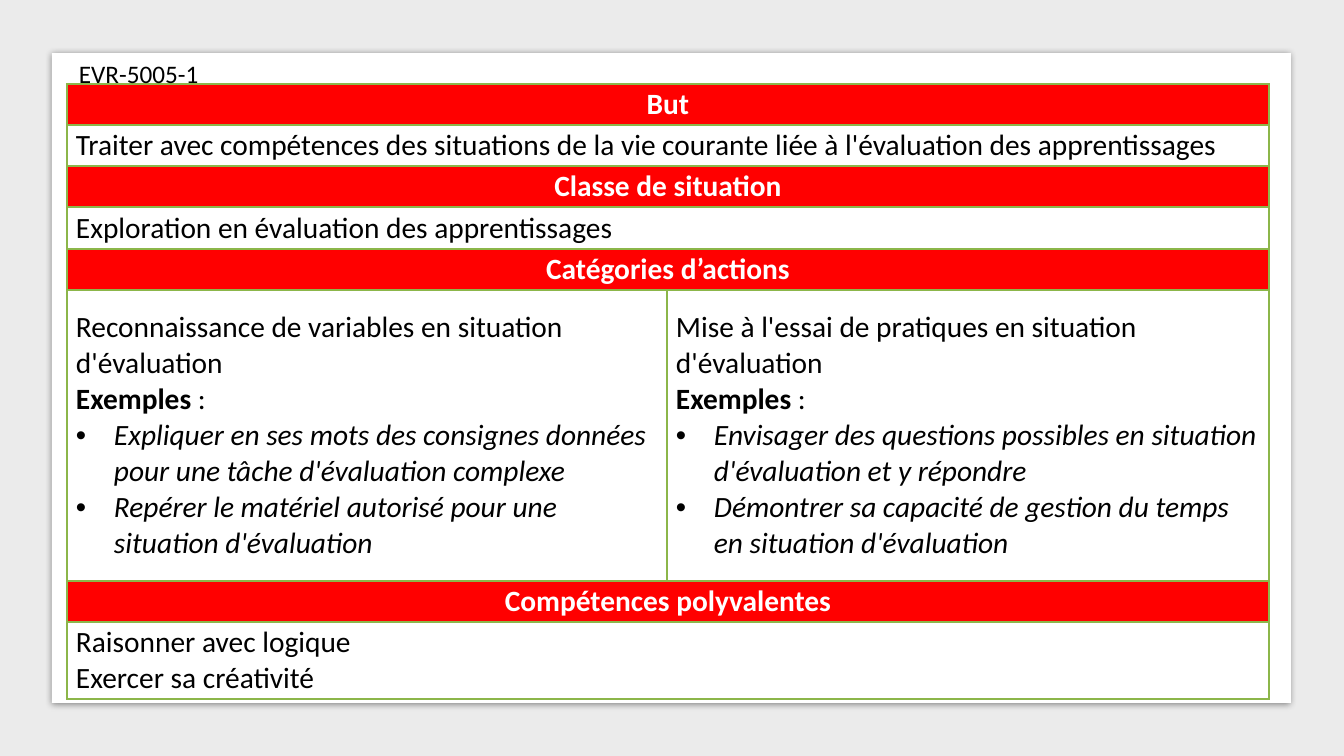
from lxml.etree import SubElement
from pptx import Presentation
from pptx.dml.color import RGBColor
from pptx.enum.shapes import MSO_SHAPE
from pptx.enum.text import MSO_ANCHOR, PP_ALIGN
from pptx.oxml import parse_xml
from pptx.oxml.ns import nsdecls, qn
from pptx.util import Pt

# Content: one entry per table row, a string is a red heading
CODE = "EVR-5005-1"
EXAMPLES = ("Exemples", " :")
ROWS = [
    "But",
    ["Traiter avec compétences des situations de la vie courante liée à "
     "l'évaluation des apprentissages"],
    "Classe de situation",
    ["Exploration en évaluation des apprentissages"],
    "Catégories d’actions",
    {
        "Reconnaissance de variables en situation d'évaluation": [
            "Expliquer en ses mots des consignes données pour une tâche d'évaluation complexe",
            "Repérer le matériel autorisé pour une situation d'évaluation",
        ],
        "Mise à l'essai de pratiques en situation d'évaluation": [
            "Envisager des questions possibles en situation d'évaluation et y répondre",
            "Démontrer sa capacité de gestion du temps en situation d'évaluation",
        ],
    },
    "Compétences polyvalentes",
    ["Raisonner avec logique", "Exercer sa créativité"],
]

# Layout in px
SLIDE = (1344, 756)
PANEL = (52, 53, 1239, 650)
TABLE = (67, 84)
COLS = (600, 602)
HEIGHTS = (41, 41, 41, 42, 41, 291, 41, 77)
CODE_BOX = (69, 53, 150, 40)
INSET, INDENT = 9, 38

FONT = "Calibri"
RED, WHITE, BLACK, GREY, GREEN = "FF0000", "FFFFFF", "000000", "EBEBEB", "8CB64A"


def px(n):
    return round(n * 12192000 / 1344)


def rgb(value):
    return RGBColor.from_string(value)


def style(r, size=21, color=BLACK, bold=False, italic=False):
    f = r.font
    f.name, f.size, f.bold, f.italic = FONT, Pt(size), bold, italic
    f.color.rgb = rgb(color)


def add_rect(s, box, color):
    sp = s.shapes.add_shape(MSO_SHAPE.RECTANGLE, *map(px, box))
    sp.shadow.inherit = False
    sp.fill.solid()
    sp.fill.fore_color.rgb = rgb(color)
    sp.line.fill.background()
    return sp


def add_shadow(sp):
    effects = sp.element.spPr.find(qn("a:effectLst"))
    effects.append(parse_xml(
        f'<a:outerShdw {nsdecls("a")} blurRad="{Pt(5)}" dist="{Pt(1.4)}" dir="5400000" '
        f'algn="ctr" rotWithShape="0"><a:srgbClr val="{BLACK}"><a:alpha val="43000"/>'
        '</a:srgbClr></a:outerShdw>'))


def format_cell(cell, fill):
    cell.margin_left = cell.margin_right = px(INSET)
    cell.margin_top = cell.margin_bottom = 0
    cell.vertical_anchor = MSO_ANCHOR.MIDDLE
    cell.fill.solid()
    cell.fill.fore_color.rgb = rgb(fill)
    tcPr = cell._tc.get_or_add_tcPr()
    for i, side in enumerate("LRTB"):
        tcPr.insert(i, parse_xml(
            f'<a:ln{side} {nsdecls("a")} w="{Pt(1)}"><a:solidFill>'
            f'<a:srgbClr val="{GREEN}"/></a:solidFill></a:ln{side}>'))


def write(cell, lines, **look):
    cell.text_frame.text = "\n".join(lines)
    for p in cell.text_frame.paragraphs:
        for r in p.runs:
            style(r, **look)


def write_category(cell, title, examples):
    write(cell, [title, EXAMPLES[0], *examples])
    label, *items = cell.text_frame.paragraphs[1:]
    style(label.runs[0], bold=True)
    r = label.add_run()
    r.text = EXAMPLES[1]
    style(r)
    for p in items:
        style(p.runs[0], italic=True)
        pPr = p._p.get_or_add_pPr()
        pPr.set("marL", str(px(INDENT)))
        pPr.set("indent", str(-px(INDENT)))
        SubElement(pPr, qn("a:buFont"), typeface="Arial")
        SubElement(pPr, qn("a:buChar"), char="•")


prs = Presentation()
prs.slide_width, prs.slide_height = map(px, SLIDE)
s = prs.slides.add_slide(prs.slide_layouts[6])

# Background and panel
add_rect(s, (0, 0, *SLIDE), GREY)
add_shadow(add_rect(s, PANEL, WHITE))

# Table
size = (sum(COLS), sum(HEIGHTS))
table = s.shapes.add_table(len(ROWS), len(COLS), *map(px, TABLE + size)).table
table.first_row = table.horz_banding = False
for col, width in zip(table.columns, COLS):
    col.width = px(width)
for i, (content, height) in enumerate(zip(ROWS, HEIGHTS)):
    table.rows[i].height = px(height)
    left, right = table.cell(i, 0), table.cell(i, 1)
    heading = isinstance(content, str)
    for cell in (left, right):
        format_cell(cell, RED if heading else WHITE)
    if isinstance(content, dict):
        for cell, (title, examples) in zip((left, right), content.items()):
            write_category(cell, title, examples)
        continue
    left.merge(right)
    if heading:
        write(left, [content], color=WHITE, bold=True)
        left.text_frame.paragraphs[0].alignment = PP_ALIGN.CENTER
    else:
        write(left, content)

# Course code
tf = s.shapes.add_textbox(*map(px, CODE_BOX)).text_frame
tf.word_wrap = True
tf.text = CODE
style(tf.paragraphs[0].runs[0], size=18)

prs.save("out.pptx")
